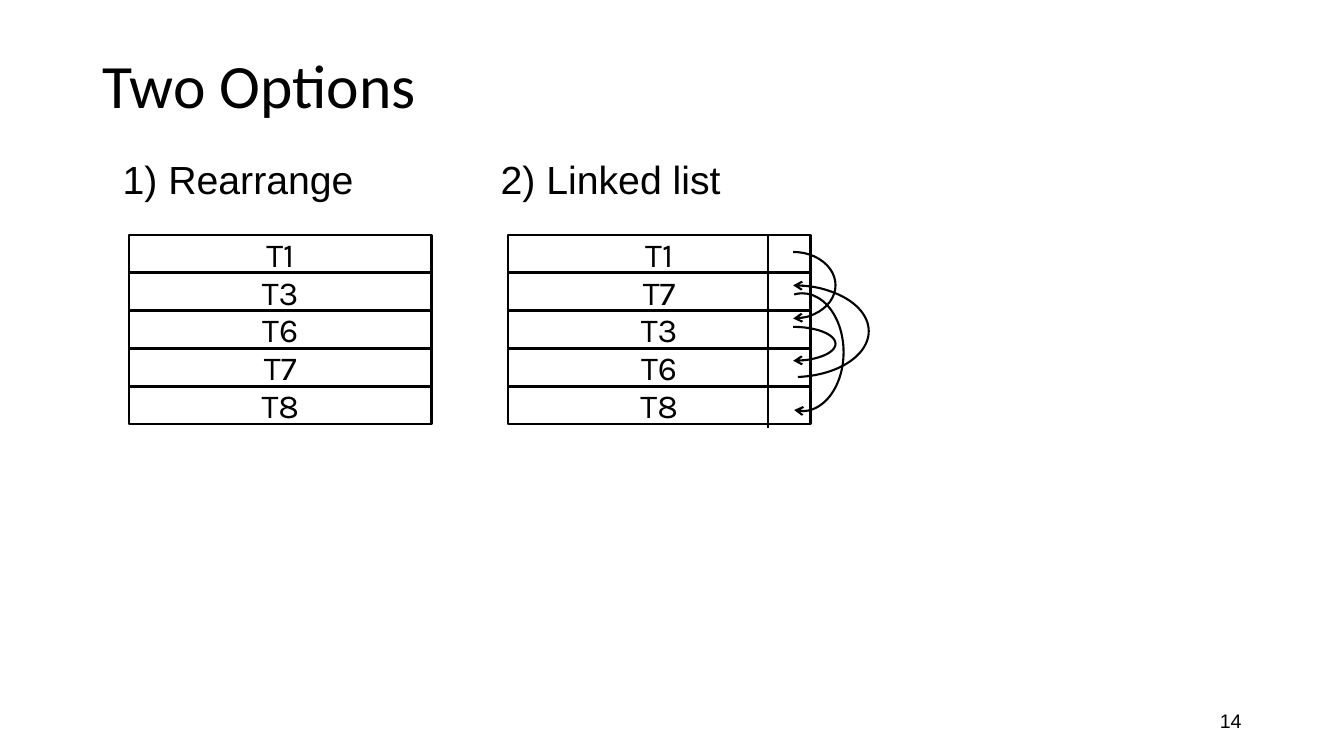
from pptx import Presentation
from pptx.dml.color import RGBColor
from pptx.enum.shapes import MSO_CONNECTOR, MSO_SHAPE
from pptx.enum.text import MSO_ANCHOR, MSO_AUTO_SIZE, PP_ALIGN
from pptx.oxml.ns import qn
from pptx.util import Pt
from lxml.etree import SubElement

COLORS = {"ink": "000000", "paper": "FFFFFF"}
INK = RGBColor.from_string(COLORS["ink"])
PAPER = RGBColor.from_string(COLORS["paper"])


def write(shape, text, font_name, size, align, anchor=MSO_ANCHOR.MIDDLE, wrap=False):
    frame = shape.text_frame
    frame.word_wrap = wrap
    frame.vertical_anchor = anchor
    frame.text = text
    para = frame.paragraphs[0]
    para.alignment = align
    para.font.name = font_name
    para.font.size = Pt(size)
    para.font.color.rgb = INK
    return frame


def outline(shape, width):
    shape.line.color.rgb = INK
    shape.line.width = Pt(width)


deck = Presentation()
deck.slide_width = Pt(960)
deck.slide_height = Pt(540)
page = deck.slides.add_slide(deck.slide_layouts[5])

# Title
title = page.shapes.title
title.left, title.top, title.width, title.height = Pt(66), Pt(24), Pt(828), Pt(78.5)
frame = write(title, "Two Options", "Calibri", 44, PP_ALIGN.LEFT, wrap=True)
frame.auto_size = MSO_AUTO_SIZE.NONE
frame.paragraphs[0].line_spacing = 0.9

# Page number
number_box = page.shapes.add_textbox(Pt(678), Pt(500.5), Pt(216), Pt(28.8))
write(number_box, "14", "Arial", 14, PP_ALIGN.RIGHT, wrap=True)

# Two options: a heading above a stack of records
ROW_TOP, ROW_PITCH, ROW_WIDTH = 167.8, 27, 216
options = [
    ("1) Rearrange", 80.6, 180, 92.2, ["T1", "T3", "T6", "T7", "T8"]),
    ("2) Linked list", 350.6, 172, 362.9, ["T1", "T7", "T3", "T6", "T8"]),
]
for heading, heading_left, heading_width, left, records in options:
    heading_box = page.shapes.add_textbox(
        Pt(heading_left), Pt(107.3), Pt(heading_width), Pt(41))
    write(heading_box, heading, "Arial", 28, PP_ALIGN.LEFT, MSO_ANCHOR.TOP)
    for index, record in enumerate(records):
        row = page.shapes.add_shape(
            MSO_SHAPE.RECTANGLE, Pt(left), Pt(ROW_TOP + index * ROW_PITCH),
            Pt(ROW_WIDTH), Pt(ROW_PITCH))
        row.shadow.inherit = False
        if index == 1:
            row.fill.background()
        else:
            row.fill.solid()
            row.fill.fore_color.rgb = PAPER
        outline(row, 2)
        write(row, record, "Karla", 24, PP_ALIGN.CENTER)

# Divider of the pointer column
divider = page.shapes.add_connector(
    MSO_CONNECTOR.STRAIGHT, Pt(548.6), Pt(167.8), Pt(548.6), Pt(305.5))
outline(divider, 1.5)
SubElement(divider._element.spPr, qn("a:effectLst"))

# Pointers: centre x, top, radius x, height, start and end angle, arrow end
pointers = [
    (566.6, 180, 30.2, 47.5, 270, 90, "tailEnd"),
    (566.6, 233.5, 30.2, 24.2, 270, 90, "tailEnd"),
    (566.6, 203.8, 54, 65.5, 270, 84, "headEnd"),
    (573.1, 209.5, 29.5, 84.2, 262, 98, "tailEnd"),
]
for center, top, radius, height, start, end, arrow_end in pointers:
    pointer = page.shapes.add_shape(
        MSO_SHAPE.ARC, Pt(center - radius), Pt(top), Pt(2 * radius), Pt(height))
    # One degree is 60000 units, and an adjustment counts 100000 units
    pointer.adjustments[0] = start * 0.6
    pointer.adjustments[1] = end * 0.6
    pointer.shadow.inherit = False
    pointer.fill.background()
    outline(pointer, 1.5)
    SubElement(pointer.line._get_or_add_ln(), qn("a:" + arrow_end), type="arrow")

deck.save("out.pptx")
